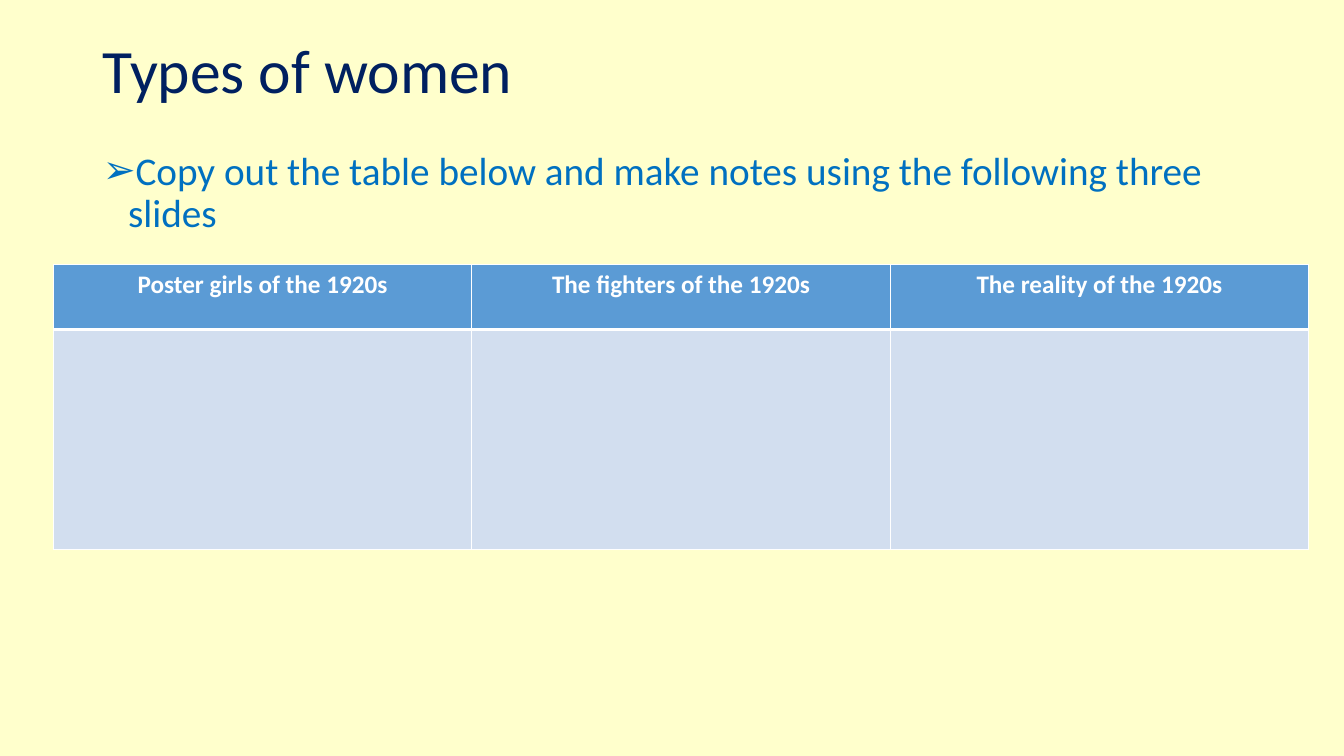
from dataclasses import dataclass

from lxml.etree import SubElement
from pptx import Presentation
from pptx.dml.color import RGBColor
from pptx.enum.text import MSO_ANCHOR as Anchor, MSO_AUTO_SIZE as AutoSize, PP_ALIGN as Align
from pptx.oxml.ns import qn
from pptx.util import Inches, Pt

TITLE = "Types of women"
TASK = "Copy out the table below and make notes using the following three slides"
NOTES_TABLE = [
    ["Poster girls of the 1920s", "The fighters of the 1920s", "The reality of the 1920s"],
    ["", "", ""],
]


@dataclass(frozen=True)
class Theme:
    font: str = "Calibri"
    background: str = "FFFFCC"
    title: str = "002060"
    body: str = "0070C0"
    header_fill: str = "5B9BD5"
    cell_fill: str = "D2DEEF"
    white: str = "FFFFFF"
    title_size: int = 44
    body_size: int = 28
    header_size: int = 18
    thin_line: int = 1
    thick_line: int = 3


THEME = Theme()
LEFT, TEXT_WIDTH = 0.92, 11.5
TITLE_HEIGHT, TASK_HEIGHT = 1.45, 1.04
TABLE_LEFT, TABLE_TOP = 0.53, 2.62
COLUMN_WIDTH = 4.15
ROW_HEIGHTS = [0.65, 2.18]


def write_text(frame, text, *, size, color, bold=False, align=Align.LEFT, line_spacing=1.0, before=0):
    paragraph = frame.paragraphs[0]
    paragraph.alignment = align
    paragraph.line_spacing = line_spacing
    paragraph.space_before = Pt(before)
    run = paragraph.add_run()
    run.text = text
    run.font.name = THEME.font
    run.font.size = Pt(size)
    run.font.bold = bold
    run.font.color.rgb = RGBColor.from_string(color)
    return paragraph


def place(shape, left, top, width, height, anchor):
    shape.left, shape.top = Inches(left), Inches(top)
    shape.width, shape.height = Inches(width), Inches(height)
    frame = shape.text_frame
    frame.word_wrap = True
    frame.auto_size = AutoSize.NONE
    frame.vertical_anchor = anchor
    return frame


def add_bullet(paragraph, symbol, indent):
    properties = paragraph._p.get_or_add_pPr()
    properties.set("marL", str(Inches(indent)))
    properties.set("indent", str(-Inches(indent)))
    SubElement(properties, qn("a:buChar"), char=symbol)


def set_borders(cell, color, **widths):
    properties = cell._tc.get_or_add_tcPr()
    for side, width in widths.items():
        line = SubElement(properties, qn(f"a:ln{side}"), w=str(Pt(width)))
        fill = SubElement(line, qn("a:solidFill"))
        SubElement(fill, qn("a:srgbClr"), val=color)


def add_notes_table(slide):
    rows, columns = len(NOTES_TABLE), len(NOTES_TABLE[0])
    table = slide.shapes.add_table(
        rows, columns, Inches(TABLE_LEFT), Inches(TABLE_TOP),
        Inches(COLUMN_WIDTH * columns), Inches(sum(ROW_HEIGHTS)),
    ).table
    for column in table.columns:
        column.width = Inches(COLUMN_WIDTH)
    for row_index, (texts, height) in enumerate(zip(NOTES_TABLE, ROW_HEIGHTS)):
        table.rows[row_index].height = Inches(height)
        is_header = row_index == 0
        thin, thick = THEME.thin_line, THEME.thick_line
        top = thin if is_header else thick
        bottom = thick if is_header else thin
        for column_index, text in enumerate(texts):
            cell = table.cell(row_index, column_index)
            set_borders(cell, THEME.white, L=thin, R=thin, T=top, B=bottom)
            cell.fill.solid()
            cell.fill.fore_color.rgb = RGBColor.from_string(
                THEME.header_fill if is_header else THEME.cell_fill)
            if text:
                write_text(cell.text_frame, text, size=THEME.header_size,
                           color=THEME.white, bold=True, align=Align.CENTER)


def main():
    presentation = Presentation()
    presentation.slide_width, presentation.slide_height = Inches(13.33), Inches(7.5)
    slide = presentation.slides.add_slide(presentation.slide_layouts[1])
    slide.background.fill.solid()
    slide.background.fill.fore_color.rgb = RGBColor.from_string(THEME.background)

    title = place(slide.shapes.title, LEFT, 0, TEXT_WIDTH, TITLE_HEIGHT, Anchor.MIDDLE)
    write_text(title, TITLE, size=THEME.title_size, color=THEME.title, line_spacing=0.9)

    task = place(slide.placeholders[1], LEFT, TITLE_HEIGHT, TEXT_WIDTH, TASK_HEIGHT, Anchor.TOP)
    paragraph = write_text(task, TASK, size=THEME.body_size, color=THEME.body,
                           line_spacing=0.9, before=10)
    add_bullet(paragraph, "➢", 0.25)

    add_notes_table(slide)
    presentation.save("out.pptx")


if __name__ == "__main__":
    main()
